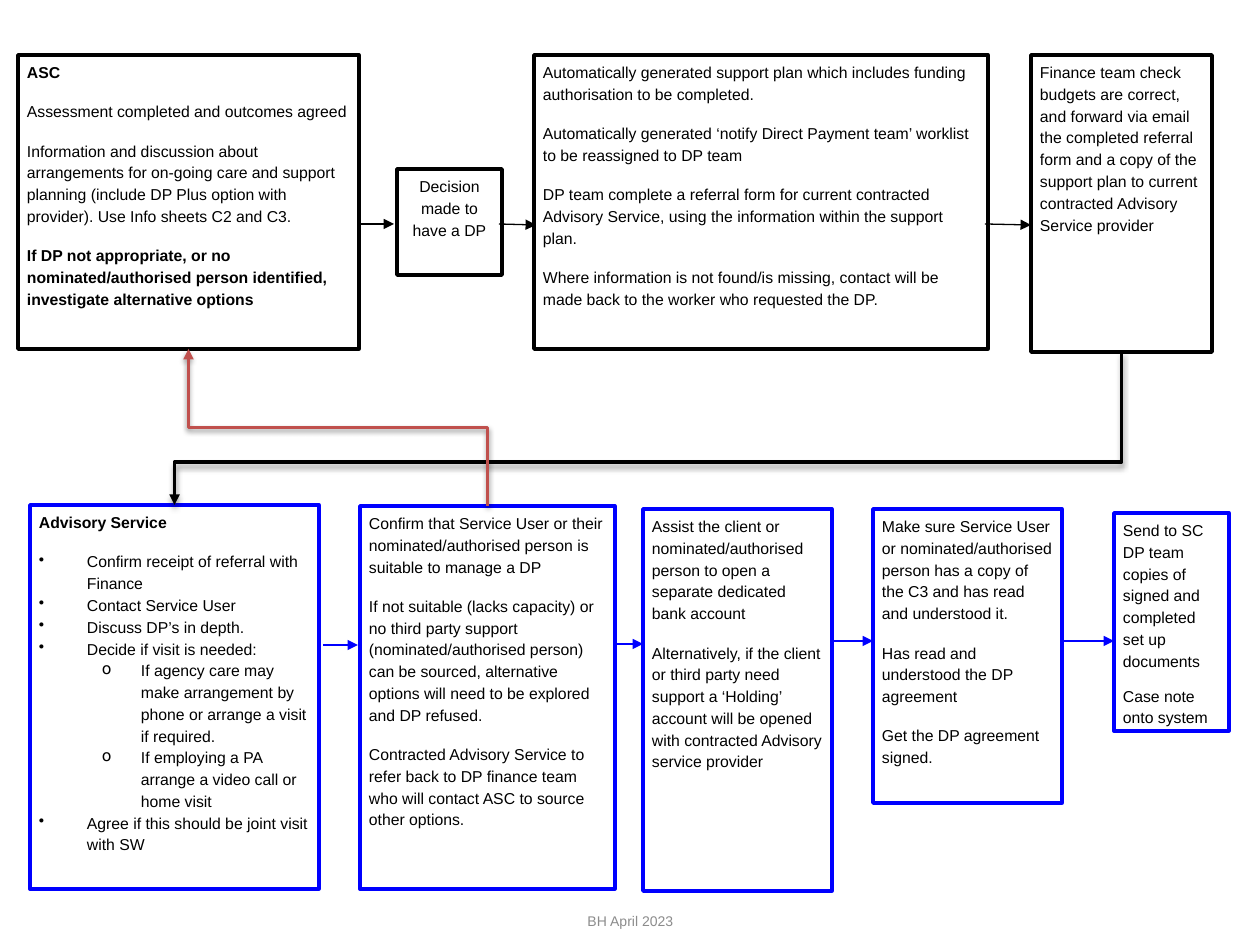
"""Build the Direct Payment referral flowchart slide."""
from lxml.etree import SubElement
from pptx import Presentation
from pptx.dml.color import RGBColor
from pptx.enum.shapes import MSO_CONNECTOR as LINK, MSO_SHAPE as SHAPE
from pptx.enum.text import MSO_ANCHOR as ANCHOR, PP_ALIGN as ALIGN
from pptx.oxml.ns import qn
from pptx.util import Pt

BLACK = RGBColor(0x00, 0x00, 0x00)
WHITE = RGBColor(0xFF, 0xFF, 0xFF)
BLUE = RGBColor(0x00, 0x00, 0xFF)
RED = RGBColor(0xC0, 0x50, 0x4D)
GREY = RGBColor(0x8C, 0x8C, 0x8C)
EMU_PER_PX = 914400 / 126

BULLETS = {"bullet": ("•", 0, 48, -48), "sub": ("o", 1, 102, -39)}

STEPS = {
    "asc": ((18, 55, 341, 294), BLACK, ALIGN.LEFT, 10, [
        ("bold", "ASC"),
        ("plain", "Assessment completed and outcomes agreed"),
        ("plain", "Information and discussion about arrangements for on-going care and support "
                  "planning (include DP Plus option with provider). Use Info sheets C2 and C3."),
        ("bold", "If DP not appropriate, or no nominated/authorised person identified, "
                 "investigate alternative options")]),
    "decision": ((397, 169, 105, 106), BLACK, ALIGN.CENTER, 7.5, [
        ("plain", "Decision made to have a DP")]),
    "support plan": ((534, 55, 454, 294), BLACK, ALIGN.LEFT, 10, [
        ("plain", "Automatically generated support plan which includes funding authorisation "
                  "to be completed."),
        ("plain", "Automatically generated ‘notify Direct Payment team’ worklist to be "
                  "reassigned to DP team"),
        ("plain", "DP team complete a referral form for current contracted Advisory Service, "
                  "using the information within the support plan."),
        ("plain", "Where information is not found/is missing, contact will be made back to "
                  "the worker who requested the DP.")]),
    "finance": ((1031, 55, 181, 297), BLACK, ALIGN.LEFT, 10, [
        ("plain", "Finance team check budgets are correct, and forward via email the completed "
                  "referral form and a copy of the support plan to current contracted "
                  "Advisory Service provider")]),
    "advisory": ((30, 505, 289, 384), BLUE, ALIGN.LEFT, 10, [
        ("bold", "Advisory Service"),
        ("bullet", "Confirm receipt of referral with Finance"),
        ("bullet", "Contact Service User"),
        ("bullet", "Discuss DP’s in depth."),
        ("bullet", "Decide if visit is needed:"),
        ("sub", "If agency care may make arrangement by phone or arrange a visit if required."),
        ("sub", "If employing a PA arrange a video call or home visit"),
        ("bullet", "Agree if this should be joint visit with SW")]),
    "suitability": ((360, 506, 255, 383), BLUE, ALIGN.LEFT, 10, [
        ("plain", "Confirm that Service User or their nominated/authorised person is suitable "
                  "to manage a DP"),
        ("plain", "If not suitable (lacks capacity) or no third party support "
                  "(nominated/authorised person) can be sourced, alternative options will "
                  "need to be explored and DP refused."),
        ("plain", "Contracted Advisory Service to refer back to DP finance team who will "
                  "contact ASC to source other options.")]),
    "account": ((643, 509, 189, 382), BLUE, ALIGN.LEFT, 10, [
        ("plain", "Assist the client or nominated/authorised person to open a separate "
                  "dedicated bank account"),
        ("plain", "Alternatively, if the client or third party need support a ‘Holding’ account "
                  "will be opened with contracted Advisory service provider")]),
    "agreement": ((873, 509, 189, 294), BLUE, ALIGN.LEFT, 10, [
        ("plain", "Make sure Service User or nominated/authorised person has a copy of the C3 "
                  "and has read and understood it."),
        ("plain", "Has read and understood the DP agreement"),
        ("plain", "Get the DP agreement signed.")]),
    "documents": ((1114, 513, 115, 218), BLUE, ALIGN.LEFT, 7.5, [
        ("plain", "Send to SC DP team copies of signed and completed set up documents"),
        ("plain", "Case note onto system")]),
}

ARROWS = [
    (358, 224, 394, 224, BLACK), (499, 224, 536, 225, BLACK), (985, 224, 1031, 225, BLACK),
    (323, 645, 358, 645, BLUE), (614, 644, 643, 644, BLUE),
    (832, 641, 873, 641, BLUE), (1062, 641, 1114, 641, BLUE),
]

RETURNS = [
    ("finance", 2, "advisory", 0, BLACK, 0.72),
    ("suitability", 0, "asc", 2, RED, 0.5),
]

FOOTER = ((431, 901, 399, 40), "BH April 2023")


def px(length):
    return round(length * EMU_PER_PX)


def add_text(paragraph, text, size, colour, bold=False):
    run = paragraph.add_run()
    run.text = text
    run.font.name, run.font.size, run.font.bold = "Arial", Pt(size), bold
    run.font.color.rgb = colour


def add_step(slide, area, colour, align, gap, lines):
    step = slide.shapes.add_shape(SHAPE.RECTANGLE, *map(px, area))
    step.shadow.inherit = False
    step.fill.solid()
    step.fill.fore_color.rgb = WHITE
    step.line.color.rgb, step.line.width = colour, Pt(2)
    frame = step.text_frame
    frame.word_wrap, frame.vertical_anchor = True, ANCHOR.TOP
    frame.margin_left = frame.margin_right = px(9)
    frame.margin_top = frame.margin_bottom = px(5)
    for index, (style, text) in enumerate(lines):
        paragraph = frame.add_paragraph() if index else frame.paragraphs[0]
        paragraph.alignment, paragraph.line_spacing = align, 1.15
        paragraph.space_after = Pt(0 if style in BULLETS else gap)
        if style in BULLETS:
            mark, paragraph.level, margin, indent = BULLETS[style]
            props = paragraph._p.get_or_add_pPr()
            props.set("marL", str(px(margin)))
            props.set("indent", str(px(indent)))
            SubElement(props, qn("a:buChar"), char=mark)
        add_text(paragraph, text, 9, BLACK, style == "bold")
    return step


def style_arrow(arrow, colour, width):
    arrow.line.color.rgb, arrow.line.width = colour, Pt(width)
    SubElement(arrow.line._get_or_add_ln(), qn("a:tailEnd"), type="triangle")
    return SubElement(arrow._element.spPr, qn("a:effectLst"))


def add_return(slide, source, source_side, target, target_side, colour, bend):
    elbow = slide.shapes.add_connector(LINK.ELBOW, 0, 0, 0, 0)
    elbow.begin_connect(source, source_side)
    elbow.end_connect(target, target_side)
    across, down = elbow.end_x - elbow.begin_x, elbow.end_y - elbow.begin_y
    mid_x, mid_y = elbow.begin_x + across // 2, elbow.begin_y + down // 2
    half_width, half_height = abs(down) // 2, across // 2 if down > 0 else -across // 2
    elbow.begin_x, elbow.end_x = mid_x - half_width, mid_x + half_width
    elbow.begin_y, elbow.end_y = mid_y + half_height, mid_y - half_height
    properties = elbow._element.spPr
    properties.find(qn("a:xfrm")).set("rot", str((90 if down > 0 else 270) * 60000))
    adjustments = properties.find(qn("a:prstGeom")).get_or_add_avLst()
    SubElement(adjustments, qn("a:gd"), name="adj1", fmla=f"val {round(bend * 100000)}")
    effects = style_arrow(elbow, colour, 2)
    shadow = SubElement(effects, qn("a:outerShdw"), blurRad=str(Pt(3.1)), dist=str(Pt(1.6)),
                        dir="5400000", rotWithShape="0")
    shade = SubElement(shadow, qn("a:srgbClr"), val=str(BLACK))
    SubElement(shade, qn("a:alpha"), val="38000")


def main():
    deck = Presentation()
    deck.slide_width, deck.slide_height = px(1260), px(945)
    slide = deck.slides.add_slide(deck.slide_layouts[6])
    steps = {name: add_step(slide, *details) for name, details in STEPS.items()}
    for *ends, colour in ARROWS:
        arrow = slide.shapes.add_connector(LINK.STRAIGHT, *map(px, ends))
        style_arrow(arrow, colour, 0.75)
    for source, source_side, target, target_side, colour, bend in RETURNS:
        add_return(slide, steps[source], source_side, steps[target], target_side, colour, bend)
    area, text = FOOTER
    frame = slide.shapes.add_textbox(*map(px, area)).text_frame
    frame.word_wrap, frame.vertical_anchor = True, ANCHOR.MIDDLE
    frame.paragraphs[0].alignment = ALIGN.CENTER
    add_text(frame.paragraphs[0], text, 8, GREY)
    deck.save("out.pptx")


if __name__ == "__main__":
    main()
